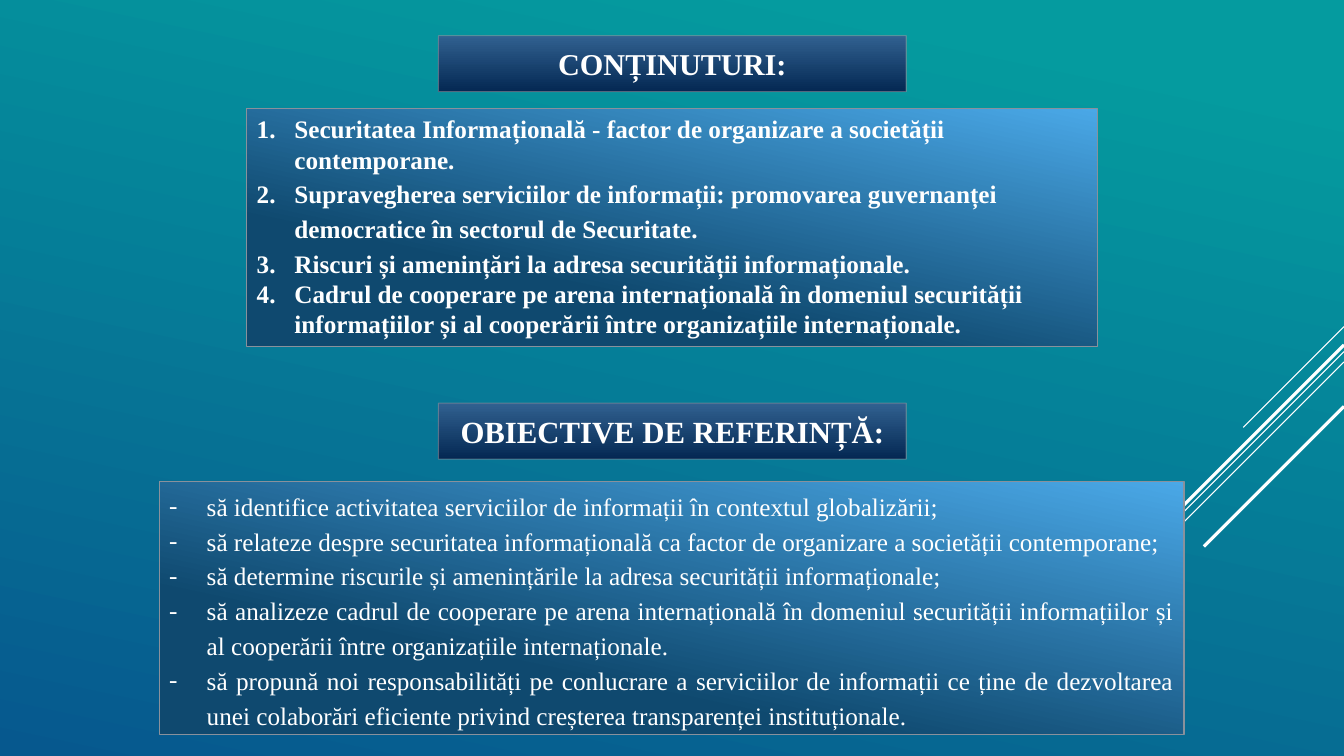
from dataclasses import dataclass

from lxml import etree
from pptx import Presentation
from pptx import util as u
from pptx.dml.color import RGBColor
from pptx.enum import shapes, text
from pptx.oxml.ns import qn


@dataclass(frozen=True)
class Blend:
    start: str
    end: str
    first: float
    last: float
    angle: int


@dataclass(frozen=True)
class Theme:
    back: Blend = Blend("059B9F", "06588E", 0.1, 1, 102)
    head: Blend = Blend("316190", "042853", 0, 1, 90)
    panel: Blend = Blend("4AA8E7", "0F496F", 0, 0.69, 102)
    edge: str = "89919C"
    ink: str = "FFFFFF"
    font: str = "Times New Roman"
    body: float = 18
    thin: float = 0.75
    thick: float = 2.25


@dataclass(frozen=True)
class Box:
    left: float
    top: float
    width: float
    height: float


@dataclass(frozen=True)
class Head:
    box: Box
    label: str
    size: float


@dataclass(frozen=True)
class Item:
    label: str
    space: float = 1.15


@dataclass(frozen=True)
class Panel:
    box: Box
    items: tuple[Item, ...]
    align: text.PP_ALIGN
    tag: str
    mark: dict[str, str]


@dataclass(frozen=True)
class Streak:
    """A 45 degree line that runs down and left from the right slide edge."""
    top: float
    run: float
    weight: float


THEME = Theme()
WIDE, HIGH = 33.87, 19.05
INDENT = 0.95

STREAKS = (
    Streak(8.23, 2.54, THEME.thin),
    Streak(8.86, 8.28, THEME.thin),
    Streak(9.12, 5.26, THEME.thin),
    Streak(8.69, 4.85, THEME.thick),
    Streak(10.24, 3.53, THEME.thick),
)
HEADS = (
    Head(Box(11.05, 0.9, 11.79, 1.41), "CONȚINUTURI:", 21.6),
    Head(Box(11.05, 10.16, 11.79, 1.41), "OBIECTIVE DE REFERINȚĂ:", 22),
)
PANELS = (
    Panel(Box(6.22, 2.74, 21.44, 6), (
        Item("Securitatea Informațională - factor de organizare a societății contemporane.", 1),
        Item("Supravegherea serviciilor de informații: promovarea guvernanței "
             "democratice în sectorul de Securitate."),
        Item("Riscuri și amenințări la adresa securității informaționale."),
        Item("Cadrul de cooperare pe arena internațională în domeniul securității "
             "informațiilor și al cooperării între organizațiile internaționale.", 1),
    ), text.PP_ALIGN.LEFT, "a:buAutoNum", {"type": "arabicPeriod"}),
    Panel(Box(4.01, 12.14, 25.83, 6.38), (
        Item("să identifice activitatea serviciilor de informații în contextul globalizării;"),
        Item("să relateze despre securitatea informațională ca factor de organizare "
             "a societății contemporane;"),
        Item("să determine riscurile și amenințările la adresa securității informaționale;"),
        Item("să analizeze cadrul de cooperare pe arena internațională în domeniul "
             "securității informațiilor și al cooperării între organizațiile internaționale."),
        Item("să propună noi responsabilități pe conlucrare a serviciilor de informații "
             "ce ține de dezvoltarea unei colaborări eficiente privind creșterea "
             "transparenței instituționale."),
    ), text.PP_ALIGN.JUSTIFY, "a:buChar", {"char": "-"}),
)


def paint(fill, blend: Blend) -> None:
    fill.gradient()
    fill.gradient_angle = 360 - blend.angle
    first, last = fill.gradient_stops
    first.color.rgb = RGBColor.from_string(blend.start)
    first.position = blend.first
    last.color.rgb = RGBColor.from_string(blend.end)
    last.position = blend.last


def style(para, size: float, bold: bool) -> None:
    for run in para.runs:
        run.font.name = THEME.font
        run.font.size = u.Pt(size)
        run.font.bold = bold
        run.font.color.rgb = RGBColor.from_string(THEME.ink)


def add_box(slide, box: Box, blend: Blend):
    shape = slide.shapes.add_shape(
        shapes.MSO_SHAPE.RECTANGLE, u.Cm(box.left), u.Cm(box.top),
        u.Cm(box.width), u.Cm(box.height))
    shape.shadow.inherit = False
    paint(shape.fill, blend)
    shape.line.color.rgb = RGBColor.from_string(THEME.edge)
    shape.line.width = u.Pt(THEME.thin)
    shape.text_frame.word_wrap = True
    return shape


def add_streak(slide, streak: Streak) -> None:
    line = slide.shapes.add_connector(
        shapes.MSO_CONNECTOR.STRAIGHT, u.Cm(WIDE), u.Cm(streak.top),
        u.Cm(WIDE - streak.run), u.Cm(streak.top + streak.run))
    line.line.color.rgb = RGBColor.from_string(THEME.ink)
    line.line.width = u.Pt(streak.weight)
    etree.SubElement(line.element.spPr, qn("a:effectLst"))


def add_head(slide, head: Head) -> None:
    shape = add_box(slide, head.box, THEME.head)
    edge = shape.element.spPr.find(qn("a:ln")).find(".//" + qn("a:srgbClr"))
    etree.SubElement(edge, qn("a:alpha"), val="60000")
    frame = shape.text_frame
    frame.vertical_anchor = text.MSO_ANCHOR.MIDDLE
    frame.text = head.label
    para = frame.paragraphs[0]
    para.alignment = text.PP_ALIGN.CENTER
    style(para, head.size, True)


def add_panel(slide, panel: Panel, bold: bool) -> None:
    frame = add_box(slide, panel.box, THEME.panel).text_frame
    frame.vertical_anchor = text.MSO_ANCHOR.TOP
    frame.text = "\n".join(item.label for item in panel.items)
    for para, item in zip(frame.paragraphs, panel.items):
        para.alignment = panel.align
        para.line_spacing = item.space
        style(para, THEME.body, bold)
        props = para._p.get_or_add_pPr()
        props.set("marL", str(u.Cm(INDENT)))
        props.set("indent", str(-u.Cm(INDENT)))
        etree.SubElement(props, qn("a:buFont"), typeface=THEME.font)
        etree.SubElement(props, qn(panel.tag), panel.mark)


def main() -> None:
    deck = Presentation()
    deck.slide_width, deck.slide_height = u.Cm(WIDE), u.Cm(HIGH)
    slide = deck.slides.add_slide(deck.slide_layouts[6])
    paint(slide.background.fill, THEME.back)
    for streak in STREAKS:
        add_streak(slide, streak)
    for head, panel, bold in zip(HEADS, PANELS, (True, False)):
        add_head(slide, head)
        add_panel(slide, panel, bold)
    deck.save("out.pptx")


if __name__ == "__main__":
    main()
